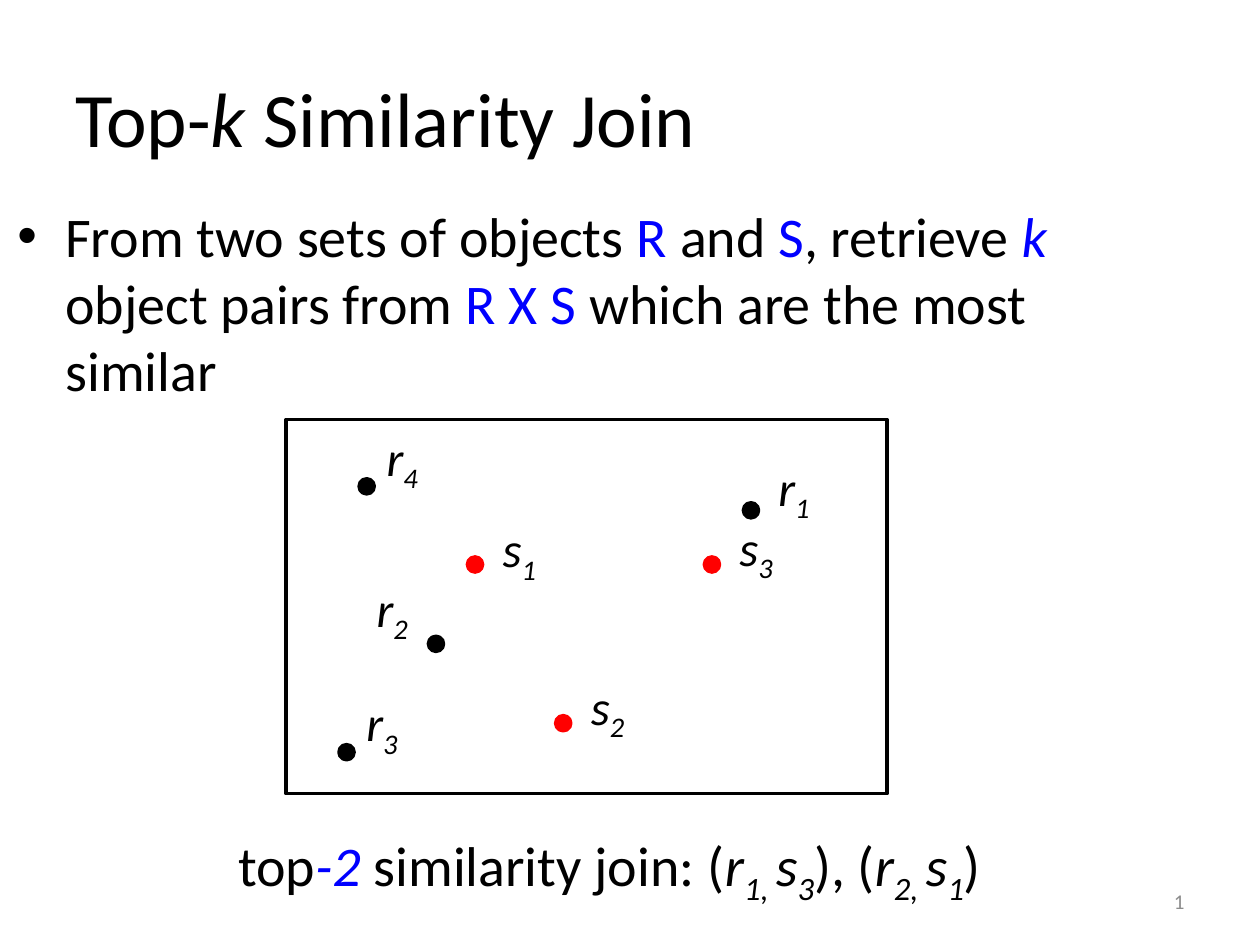
from lxml import etree
from pptx import Presentation
from pptx.dml.color import RGBColor
from pptx.enum.shapes import MSO_SHAPE
from pptx.enum.text import MSO_ANCHOR, MSO_AUTO_SIZE, PP_ALIGN
from pptx.oxml.ns import qn
from pptx.util import Inches, Pt

BLACK = RGBColor(0x00, 0x00, 0x00)
BLUE = RGBColor(0x00, 0x00, 0xFF)
RED = RGBColor(0xFF, 0x00, 0x00)
GRAY = RGBColor(0x8C, 0x8C, 0x8C)
RECTANGLE, OVAL = MSO_SHAPE.RECTANGLE, MSO_SHAPE.OVAL
TOP, MIDDLE = MSO_ANCHOR.TOP, MSO_ANCHOR.MIDDLE
GROW = MSO_AUTO_SIZE.SHAPE_TO_FIT_TEXT
RIGHT = PP_ALIGN.RIGHT

FONT = "Calibri"
DOT_SIZE = 0.12
LABEL_HEIGHT = 0.57
HANGING = 0.38

PLAIN = {"italic": False}
ITALIC = {"italic": True}
BLUE_PLAIN = {"italic": False, "color": BLUE}
BLUE_ITALIC = {"italic": True, "color": BLUE}
SUBSCRIPT = {"italic": True, "subscript": True}

TITLE = [("Top-", PLAIN), ("k", ITALIC), (" Similarity Join", PLAIN)]
DEFINITION = [
    ("From two sets of objects ", PLAIN), ("R", BLUE_PLAIN), (" and ", PLAIN),
    ("S", BLUE_PLAIN), (", retrieve ", PLAIN), ("k", BLUE_ITALIC),
    (" object pairs from ", PLAIN), ("R X S", BLUE_PLAIN),
    (" which are the most similar", PLAIN),
]
RESULT = [
    (" ", BLUE_ITALIC), ("top", PLAIN), ("-", BLUE_ITALIC), ("2 ", BLUE_ITALIC),
    ("similarity join: (", PLAIN),
    ("r", ITALIC), ("1, ", SUBSCRIPT), ("s", ITALIC), ("3", SUBSCRIPT),
    ("), (", PLAIN),
    ("r", ITALIC), ("2, ", SUBSCRIPT), ("s", ITALIC), ("1", SUBSCRIPT),
    (")", PLAIN),
]

# set, index, dot left and top, label left, top and width, label wraps
OBJECTS = [
    ("s", "1", 3.71, 4.42, 3.89, 4.07, 0.49, False),
    ("r", "4", 2.85, 3.80, 2.97, 3.34, 0.49, False),
    ("r", "2", 3.40, 5.05, 2.89, 4.54, 0.63, True),
    ("r", "3", 2.69, 5.91, 2.81, 5.45, 0.49, False),
    ("r", "1", 5.90, 3.99, 6.08, 3.58, 0.47, False),
    ("s", "2", 4.41, 5.68, 4.59, 5.32, 0.49, False),
    ("s", "3", 5.59, 4.42, 5.77, 4.06, 0.49, False),
]
SET_COLORS = {"r": BLACK, "s": RED}


def add_runs(paragraph, runs, size, color=BLACK):
    for text, style in runs:
        run = paragraph.add_run()
        run.text = text
        values = {"name": FONT, "size": Pt(size), "italic": style["italic"]}
        for attribute, value in values.items():
            setattr(run.font, attribute, value)
        run.font.color.rgb = style.get("color", color)
        if style.get("subscript"):
            run.font._element.set("baseline", "-25000")


def add_text(slide, box, runs, size, color=BLACK, **frame_format):
    """Add a text box and return its only paragraph."""
    frame = slide.shapes.add_textbox(*map(Inches, box)).text_frame
    values = {"word_wrap": True, "vertical_anchor": TOP, **frame_format}
    for attribute, value in values.items():
        setattr(frame, attribute, value)
    paragraph = frame.paragraphs[0]
    add_runs(paragraph, runs, size, color)
    return paragraph


def set_hanging_indent(paragraph, bullet=None):
    paragraph.space_before = Pt(6.4)
    properties = paragraph._p.get_or_add_pPr()
    properties.set("marL", str(Inches(HANGING)))
    properties.set("indent", str(-Inches(HANGING)))
    if bullet:
        etree.SubElement(properties, qn("a:buFont"), typeface="Arial")
        etree.SubElement(properties, qn("a:buChar"), char=bullet)
    else:
        etree.SubElement(properties, qn("a:buNone"))


def make_slide_number(paragraph):
    """Turn the paragraph's run into a slide number field."""
    run = paragraph.runs[0]._r
    field = etree.SubElement(
        paragraph._p, qn("a:fld"),
        id="{B6F15528-21DE-4FAA-801E-634DDDAF4B2B}", type="slidenum")
    field.extend(list(run))
    paragraph._p.remove(run)


def add_outlined(slide, preset, box, fill=None):
    shape = slide.shapes.add_shape(preset, *map(Inches, box))
    shape.shadow.inherit = False
    if fill is None:
        shape.fill.background()
    else:
        shape.fill.solid()
        shape.fill.fore_color.rgb = fill
    shape.line.color.rgb = BLACK if fill is None else fill
    shape.line.width = Pt(2)


def add_object(slide, set_name, index, dot_left, dot_top,
               label_left, label_top, label_width, wraps):
    """Add one data point with its subscripted label."""
    add_outlined(slide, OVAL, (dot_left, dot_top, DOT_SIZE, DOT_SIZE),
                 SET_COLORS[set_name])
    add_text(slide, (label_left, label_top, label_width, LABEL_HEIGHT),
             [(set_name, ITALIC), (index, SUBSCRIPT)], 28,
             word_wrap=wraps, auto_size=GROW)


def main():
    prs = Presentation()
    prs.slide_width, prs.slide_height = Inches(10), Inches(7.5)
    slide = prs.slides.add_slide(prs.slide_layouts[6])

    add_text(slide, (0.5, 0.3, 9, 1.25), TITLE, 44, vertical_anchor=MIDDLE)
    definition = add_text(slide, (0.04, 1.55, 9, 0.91), DEFINITION, 32)
    set_hanging_indent(definition, "•")

    number = add_text(slide, (7.17, 6.95, 2.33, 0.4), [("2", PLAIN)], 12, GRAY,
                      vertical_anchor=MIDDLE)
    number.alignment = RIGHT
    make_slide_number(number)

    add_outlined(slide, RECTANGLE, (2.27, 3.33, 4.77, 2.97))
    for data_object in OBJECTS:
        add_object(slide, *data_object)

    result = add_text(slide, (1.69, 6.54, 6.52, 0.91), RESULT, 32)
    set_hanging_indent(result)

    prs.save("out.pptx")


if __name__ == "__main__":
    main()
